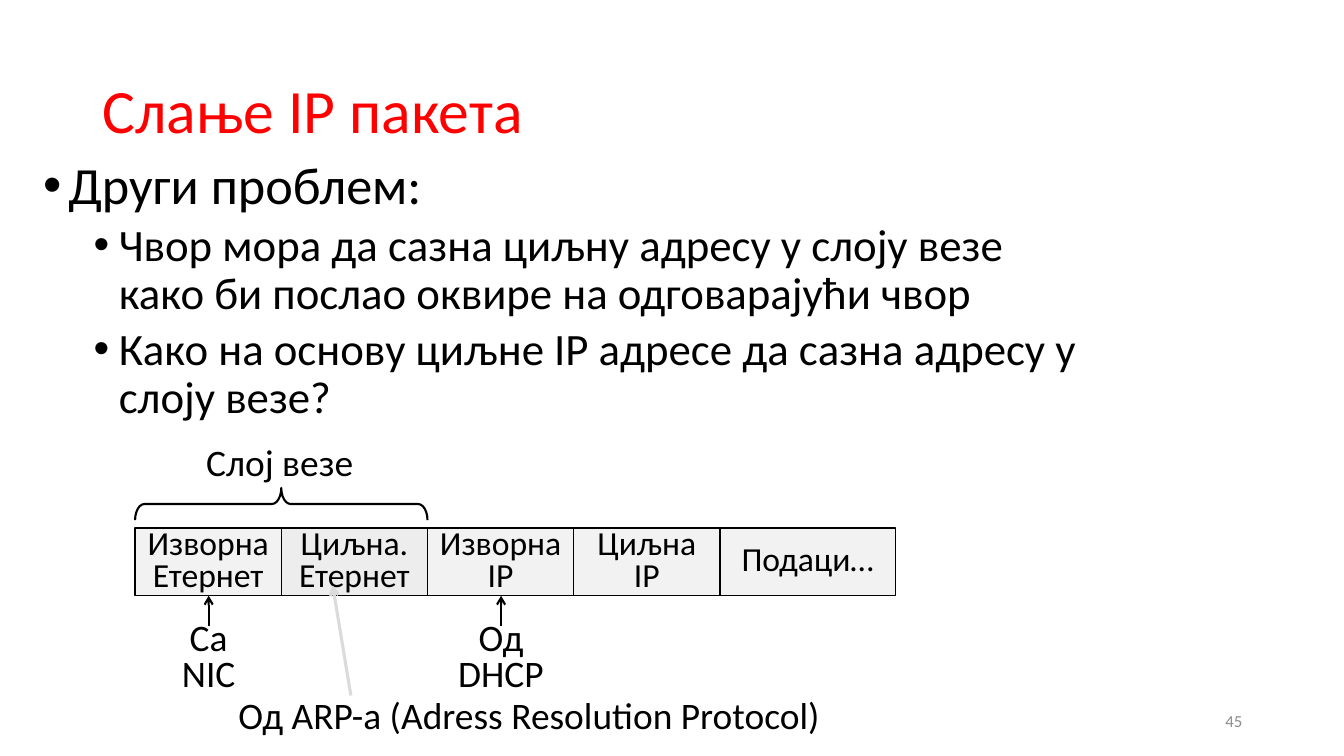
from dataclasses import dataclass

from lxml.etree import SubElement
from pptx import Presentation
from pptx.dml.color import RGBColor
from pptx.enum.shapes import MSO_CONNECTOR, MSO_SHAPE
from pptx.enum.text import MSO_ANCHOR, PP_ALIGN
from pptx.oxml.ns import qn
from pptx.slide import Slide
from pptx.text.text import TextFrame
from pptx.util import Inches, Pt


@dataclass(frozen=True)
class Theme:
    font: str = "Calibri"
    ink: str = "000000"
    title: str = "FF0000"
    number: str = "8C8C8C"
    field: str = "F2F2F2"
    target_field: str = "EDEDED"
    pale_arrow: str = "DBDBDB"
    title_size: float = 44
    topic_size: float = 37.3
    point_size: float = 32
    label_size: float = 26.7
    field_size: float = 24
    number_size: float = 12


THEME = Theme()


@dataclass(frozen=True)
class Box:
    left: float
    top: float
    width: float
    height: float

    def lengths(self) -> list[Inches]:
        return [Inches(v) for v in (self.left, self.top, self.width, self.height)]


@dataclass(frozen=True)
class Field:
    lines: tuple[str, ...]
    width: float = 1.45
    fill: str = THEME.field


@dataclass(frozen=True)
class Label:
    lines: tuple[str, ...]
    box: Box
    spacing: float = 1.0
    inset: float | None = None


@dataclass(frozen=True)
class Arrow:
    start: tuple[float, float]
    end: tuple[float, float]
    color: str = THEME.ink
    weight: float = 1.5


FIELD_LEFT, FIELD_TOP, FIELD_HEIGHT = 1.34, 5.24, 0.67
FIELDS = (
    Field(("Изворна", "Етернет")),
    Field(("Циљна.", "Етернет"), fill=THEME.target_field),
    Field(("Изворна IP",)),
    Field(("Циљна\nIP",)),
    Field(("Подаци…",), width=1.74),
)
LABELS = (
    Label(("Слој везе",), Box(1.94, 4.31, 1.67, 0.55)),
    Label(("Од", "DHCP"), Box(4.44, 6.13, 1.06, 0.82), spacing=0.8),
    Label(("Са", "NIC"), Box(1.7, 6.13, 0.74, 0.82), spacing=0.8),
    Label(("Од ARP-а (Adress Resolution Protocol)",),
          Box(2.34, 6.87, 5.82, 0.45), inset=0),
)
ARROWS = (
    Arrow((4.97, 6.21), (4.97, 5.91)),
    Arrow((2.07, 6.21), (2.07, 5.91)),
    Arrow((3.48, 6.9), (3.3, 5.81), THEME.pale_arrow, 2.25),
)
POINTS = (
    "Чвор мора да сазна циљну адресу у слоју везе како би послао оквире на одговарајући чвор",
    "Како на основу циљне IP адресе да сазна адресу у слоју везе?",
)


def write(frame: TextFrame, text: str, *, size: float, color: str = THEME.ink,
          align: PP_ALIGN = PP_ALIGN.LEFT, spacing: float = 1.0,
          before: float = 0, level: int = 0,
          bullet_indent: float | None = None) -> None:
    """Fill the empty first paragraph, or append another one."""
    paragraph = frame.paragraphs[-1]
    if paragraph.runs:
        paragraph = frame.add_paragraph()
    paragraph.text = text
    paragraph.alignment = align
    paragraph.line_spacing = spacing
    paragraph.space_before = Pt(before)
    paragraph.level = level
    for run in paragraph.runs:
        run.font.name = THEME.font
        run.font.size = Pt(size)
        run.font.color.rgb = RGBColor.from_string(color)
    if bullet_indent is not None:
        properties = paragraph._p.get_or_add_pPr()
        properties.set("marL", str(Inches(bullet_indent)))
        properties.set("indent", str(Inches(-0.25)))
        SubElement(properties, qn("a:buFont")).set("typeface", "Arial")
        SubElement(properties, qn("a:buChar")).set("char", "•")


def add_text_frame(slide: Slide, box: Box, anchor: MSO_ANCHOR = MSO_ANCHOR.TOP,
                   wrap: bool = True) -> TextFrame:
    frame = slide.shapes.add_textbox(*box.lengths()).text_frame
    frame.word_wrap = wrap
    frame.vertical_anchor = anchor
    return frame


def add_fields(slide: Slide) -> None:
    """Lay the packet fields side by side."""
    left = FIELD_LEFT
    for field in FIELDS:
        box = Box(left, FIELD_TOP, field.width, FIELD_HEIGHT)
        cell = slide.shapes.add_shape(MSO_SHAPE.RECTANGLE, *box.lengths())
        cell.shadow.inherit = False
        cell.fill.solid()
        cell.fill.fore_color.rgb = RGBColor.from_string(field.fill)
        cell.line.color.rgb = RGBColor.from_string(THEME.ink)
        cell.line.width = Pt(1)
        cell.text_frame.word_wrap = True
        cell.text_frame.vertical_anchor = MSO_ANCHOR.MIDDLE
        for line in field.lines:
            write(cell.text_frame, line, size=THEME.field_size,
                  align=PP_ALIGN.CENTER, spacing=0.8)
        left += field.width


def add_link_layer_brace(slide: Slide) -> None:
    brace = slide.shapes.add_shape(MSO_SHAPE.RIGHT_BRACE,
                                   *Box(2.63, 3.55, 0.32, 2.9).lengths())
    brace.rotation = 270
    brace.adjustments[0] = 0.29
    brace.adjustments[1] = 0.5
    brace.shadow.inherit = False
    brace.fill.background()
    brace.line.color.rgb = RGBColor.from_string(THEME.ink)
    brace.line.width = Pt(1.5)


def add_label(slide: Slide, label: Label) -> None:
    frame = add_text_frame(slide, label.box, wrap=False)
    if label.inset is not None:
        frame.margin_left = frame.margin_right = Inches(label.inset)
        frame.margin_top = frame.margin_bottom = Inches(label.inset)
    for line in label.lines:
        write(frame, line, size=THEME.label_size, align=PP_ALIGN.CENTER,
              spacing=label.spacing)


def add_arrow(slide: Slide, arrow: Arrow) -> None:
    ends = [Inches(v) for v in (*arrow.start, *arrow.end)]
    connector = slide.shapes.add_connector(MSO_CONNECTOR.STRAIGHT, *ends)
    connector.line.color.rgb = RGBColor.from_string(arrow.color)
    connector.line.width = Pt(arrow.weight)
    SubElement(connector.line._get_or_add_ln(), qn("a:tailEnd")).set("type", "arrow")
    SubElement(connector._element.spPr, qn("a:effectLst"))


def main() -> None:
    presentation = Presentation()
    presentation.slide_width = Inches(13.33)
    presentation.slide_height = Inches(7.5)
    slide = presentation.slides.add_slide(presentation.slide_layouts[6])

    number = add_text_frame(slide, Box(9.42, 6.95, 3, 0.4), MSO_ANCHOR.MIDDLE)
    write(number, "45", size=THEME.number_size, color=THEME.number,
          align=PP_ALIGN.RIGHT)
    title = add_text_frame(slide, Box(0.92, 0.4, 11.5, 1.45), MSO_ANCHOR.MIDDLE)
    write(title, "Слање IP пакета", size=THEME.title_size, color=THEME.title,
          spacing=0.9)
    body = add_text_frame(slide, Box(0.33, 1.53, 10.57, 5.22))
    write(body, "Други проблем:", size=THEME.topic_size, spacing=0.9, before=10,
          bullet_indent=0.25)
    for point in POINTS:
        write(body, point, size=THEME.point_size, spacing=0.9, before=5, level=1,
              bullet_indent=0.75)

    add_fields(slide)
    add_link_layer_brace(slide)
    for label in LABELS:
        add_label(slide, label)
    for arrow in ARROWS:
        add_arrow(slide, arrow)
    presentation.save("out.pptx")


if __name__ == "__main__":
    main()
